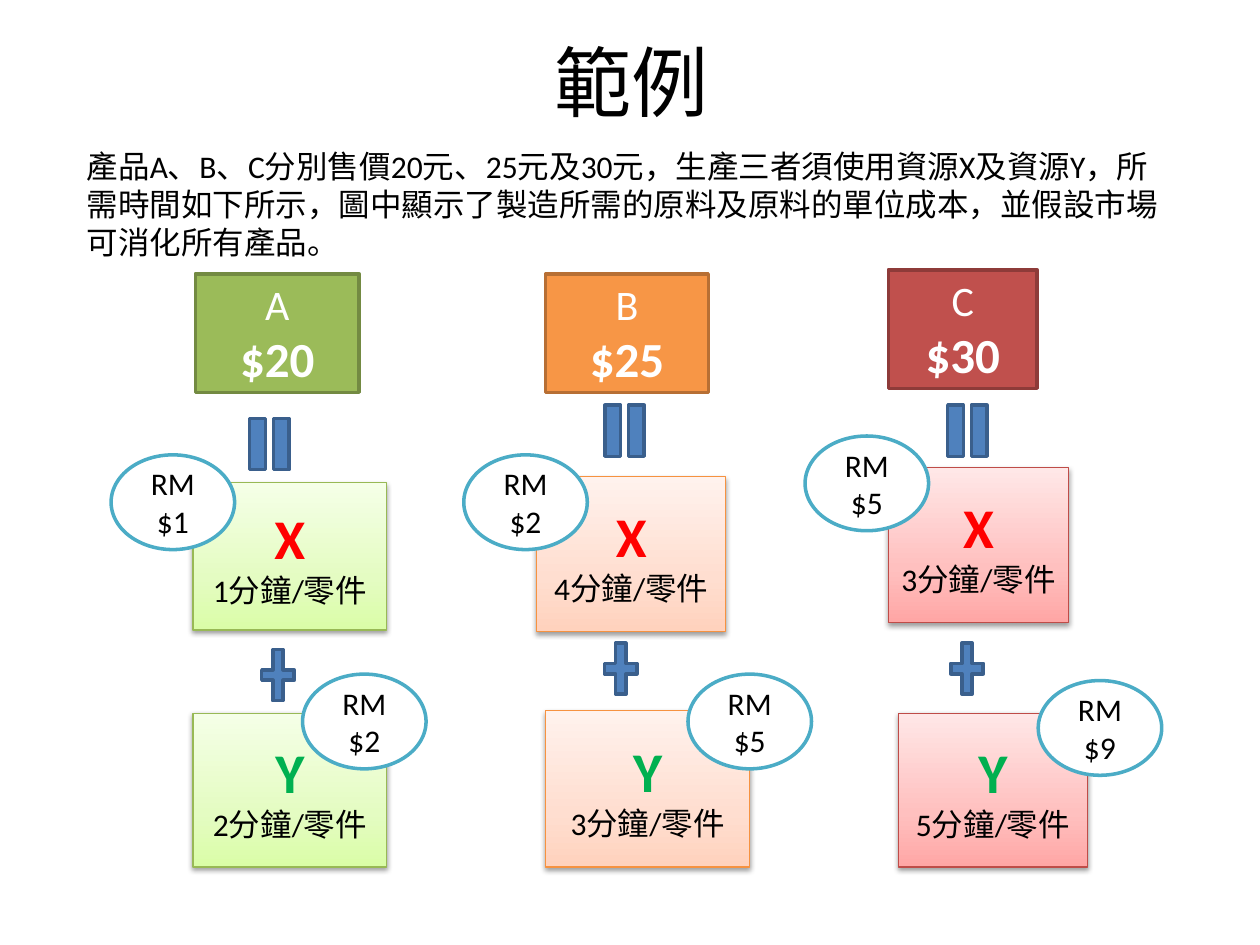
from copy import deepcopy
from dataclasses import dataclass

from lxml.etree import SubElement
from pptx import Presentation
from pptx.dml.color import RGBColor
from pptx.enum.shapes import MSO_SHAPE
from pptx.enum.text import MSO_ANCHOR, PP_ALIGN
from pptx.oxml.ns import qn
from pptx.util import Cm, Pt

FONT = "Calibri"
BLACK = RGBColor(0x00, 0x00, 0x00)
WHITE = RGBColor(0xFF, 0xFF, 0xFF)
RED = RGBColor(0xFF, 0x00, 0x00)
GREEN = RGBColor(0x00, 0xB0, 0x50)
SIGN_FILL = RGBColor(0x4F, 0x81, 0xBD)
SIGN_LINE = RGBColor(0x3A, 0x5F, 0x8C)
COST_LINE = RGBColor(0x4B, 0xAC, 0xC6)

DESCRIPTION = (
    "產品A、B、C分別售價20元、25元及30元，生產三者須使用資源X及資源Y，"
    "所需時間如下所示，圖中顯示了製造所需的原料及原料的單位成本，並假設市場可消化所有產品。"
)


@dataclass
class Palette:
    """Colours of one product column."""

    fill: RGBColor
    line: RGBColor
    step_line: RGBColor
    step_stops: tuple


OLIVE = Palette(
    RGBColor(0x9B, 0xBB, 0x59), RGBColor(0x73, 0x8A, 0x42), RGBColor(0x98, 0xB9, 0x55),
    (RGBColor(0xDA, 0xFD, 0xA7), RGBColor(0xE4, 0xFC, 0xC2), RGBColor(0xF5, 0xFF, 0xE7)),
)
ORANGE = Palette(
    RGBColor(0xF7, 0x96, 0x46), RGBColor(0xB7, 0x6F, 0x34), RGBColor(0xF6, 0x92, 0x40),
    (RGBColor(0xFF, 0xD2, 0xBD), RGBColor(0xFF, 0xDE, 0xD0), RGBColor(0xFF, 0xF2, 0xED)),
)
CRIMSON = Palette(
    RGBColor(0xC0, 0x50, 0x4D), RGBColor(0x8E, 0x3B, 0x39), RGBColor(0xBF, 0x4C, 0x48),
    (RGBColor(0xFF, 0xA6, 0xA5), RGBColor(0xFF, 0xC0, 0xBF), RGBColor(0xFF, 0xE7, 0xE7)),
)


@dataclass
class Product:
    """Wording and part boxes, in centimetres from the column corner."""

    name: str
    price: str
    palette: Palette
    minutes: tuple
    costs: tuple
    corner: tuple
    head: tuple
    equals: tuple
    plus: tuple
    steps: tuple
    cost_spots: tuple


PRODUCTS = (
    Product("A", "$20", OLIVE, (1, 2), ("$1", "$2"), (2.24, 5.44),
            head=(1.7, 0.08, 3.3, 2.39), equals=(2.49, 2.84), plus=(2.92, 7.47),
            steps=((1.65, 4.29, 3.91, 2.97), (1.65, 8.94, 3.91, 3.1)),
            cost_spots=((0, 3.73), (3.86, 8.15))),
    Product("B", "$25", ORANGE, (4, 3), ("$2", "$5"), (9.35, 5.44),
            head=(1.65, 0.08, 3.28, 2.39), equals=(2.54, 2.57), plus=(2.72, 7.34),
            steps=((1.47, 4.17, 3.81, 3.12), (1.65, 8.89, 4.11, 3.15)),
            cost_spots=((0, 3.73), (4.52, 8.15))),
    Product("C", "$30", CRIMSON, (3, 5), ("$5", "$9"), (16.23, 5.44),
            head=(1.68, 0, 3, 2.39), equals=(2.57, 2.57), plus=(2.82, 7.34),
            steps=((1.68, 3.99, 3.63, 3.12), (1.88, 8.94, 3.81, 3.1)),
            cost_spots=((0, 3.35), (4.7, 8.28))),
)


def style_run(run, size, color, bold=False):
    """Set the font of a run."""
    run.font.name = FONT
    run.font.size = Pt(size)
    run.font.bold = bold
    run.font.color.rgb = color


def add_shape(slide, kind, corner, box, fill, line, line_width=2):
    """Add a preset shape without shadow, placed relative to a corner."""
    left, top, width, height = box
    shape = slide.shapes.add_shape(
        kind, Cm(corner[0] + left), Cm(corner[1] + top), Cm(width), Cm(height))
    shape.shadow.inherit = False
    shape.fill.solid()
    shape.fill.fore_color.rgb = fill
    shape.line.color.rgb = line
    shape.line.width = Pt(line_width)
    return shape


def write_lines(shape, *lines):
    """Write centred lines, each given as text, size, colour and bold."""
    shape.text_frame.vertical_anchor = MSO_ANCHOR.MIDDLE
    paragraph = shape.text_frame.paragraphs[0]
    paragraph.text = "\v".join(line[0] for line in lines)
    paragraph.alignment = PP_ALIGN.CENTER
    for run, (_, size, color, bold) in zip(paragraph.runs, lines):
        style_run(run, size, color, bold)


def shade_step(shape, colors):
    """Give a step box its rising gradient and soft shadow."""
    properties = shape._element.spPr
    shape.fill.gradient()
    shape.fill.gradient_angle = 90
    stop_list = properties.find(".//" + qn("a:gsLst"))
    stop_list.insert(1, deepcopy(stop_list[0]))
    for stop, position, color in zip(shape.fill.gradient_stops, (0, 0.35, 1), colors):
        stop.position = position
        stop.color.rgb = color
    shadow = SubElement(
        properties.find(qn("a:effectLst")), qn("a:outerShdw"),
        blurRad=str(Pt(3.1)), dist=str(Pt(1.6)), dir="5400000", rotWithShape="0")
    shadow_color = SubElement(shadow, qn("a:srgbClr"), val=str(BLACK))
    SubElement(shadow_color, qn("a:alpha"), val="38000")


def add_product(slide, product):
    """Build one column: product, equals sign, two steps and their costs."""
    corner, palette = product.corner, product.palette
    head = add_shape(slide, MSO_SHAPE.RECTANGLE, corner, product.head,
                     palette.fill, palette.line)
    write_lines(head, (product.name, 24, WHITE, False), (product.price, 28, WHITE, True))

    resources = (("X", RED), ("Y", GREEN))
    for (resource, color), minutes, box in zip(resources, product.minutes, product.steps):
        step = add_shape(slide, MSO_SHAPE.RECTANGLE, corner, box,
                         WHITE, palette.step_line, 0.75)
        shade_step(step, palette.step_stops)
        write_lines(step, (resource, 32, color, True),
                    (f"{minutes}分鐘/零件", 18, BLACK, False))

    add_shape(slide, MSO_SHAPE.MATH_PLUS, corner, (*product.plus, 0.89, 1.4),
              SIGN_FILL, SIGN_LINE)
    equals = add_shape(slide, MSO_SHAPE.MATH_EQUAL, corner, (*product.equals, 1.4, 1.35),
                       SIGN_FILL, SIGN_LINE)
    equals.rotation = 90

    for cost, spot in zip(product.costs, product.cost_spots):
        material = add_shape(slide, MSO_SHAPE.OVAL, corner, (*spot, 2.49, 1.91),
                             WHITE, COST_LINE)
        write_lines(material, ("RM", 18, BLACK, False), (cost, 18, BLACK, False))


def add_title(slide, left, top, width, height):
    """Place the slide title."""
    title = slide.shapes.title
    title.left, title.top, title.width, title.height = map(Cm, (left, top, width, height))
    write_lines(title, ("範例", 44, BLACK, False))


def add_description(slide, left, top, width, height):
    """Place the text that explains the example."""
    box = slide.shapes.add_textbox(*map(Cm, (left, top, width, height)))
    box.text_frame.word_wrap = True
    box.text_frame.text = DESCRIPTION
    style_run(box.text_frame.paragraphs[0].runs[0], 18, BLACK)


def main():
    """Build and save the slide."""
    presentation = Presentation()
    presentation.slide_width, presentation.slide_height = Cm(25.4), Cm(19.05)
    slide = presentation.slides.add_slide(presentation.slide_layouts[5])
    add_title(slide, 1.3, 0.33, 22.86, 2.59)
    for product in PRODUCTS:
        add_product(slide, product)
    add_description(slide, 1.5, 2.84, 22.4, 2.57)
    presentation.save("out.pptx")


if __name__ == "__main__":
    main()
